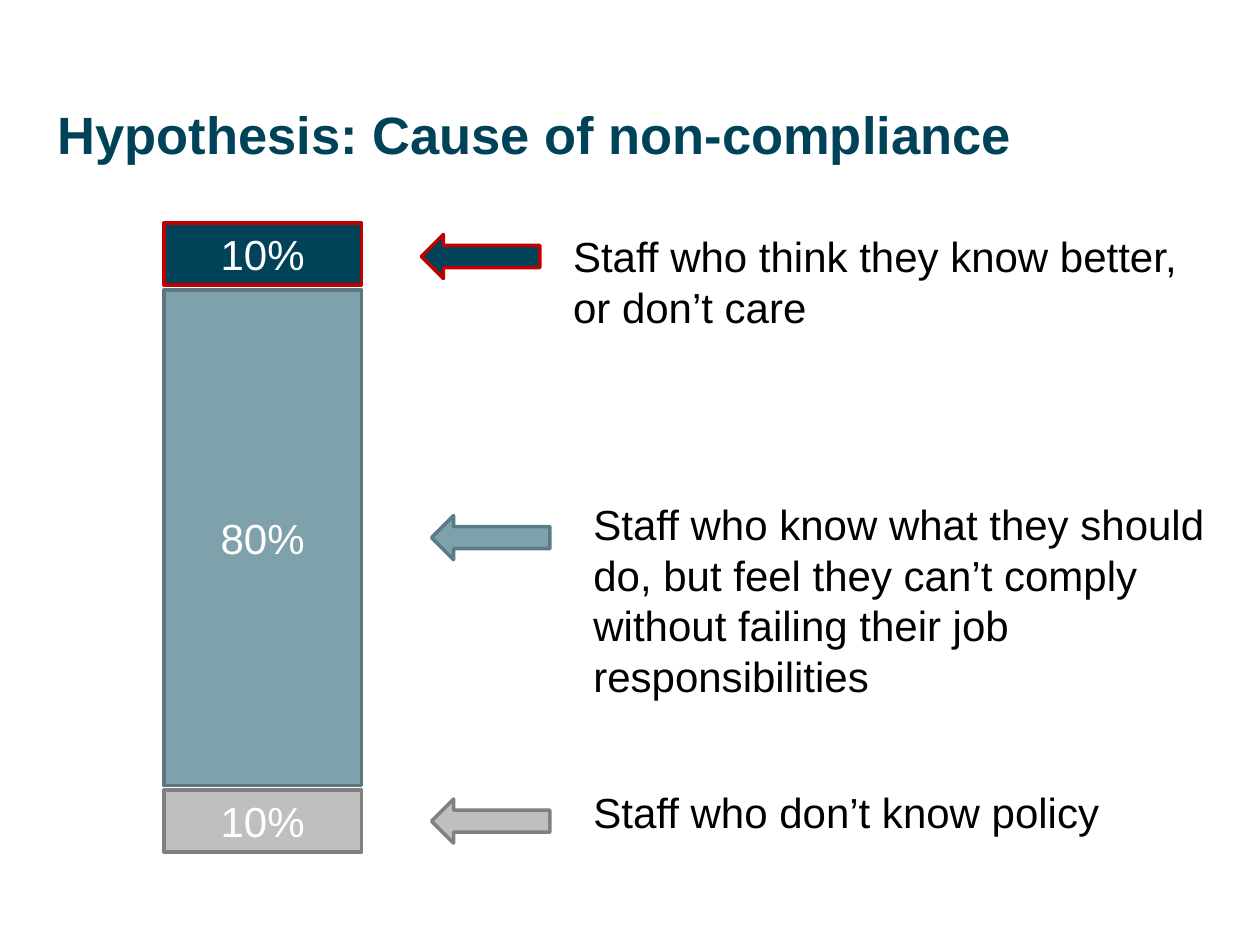
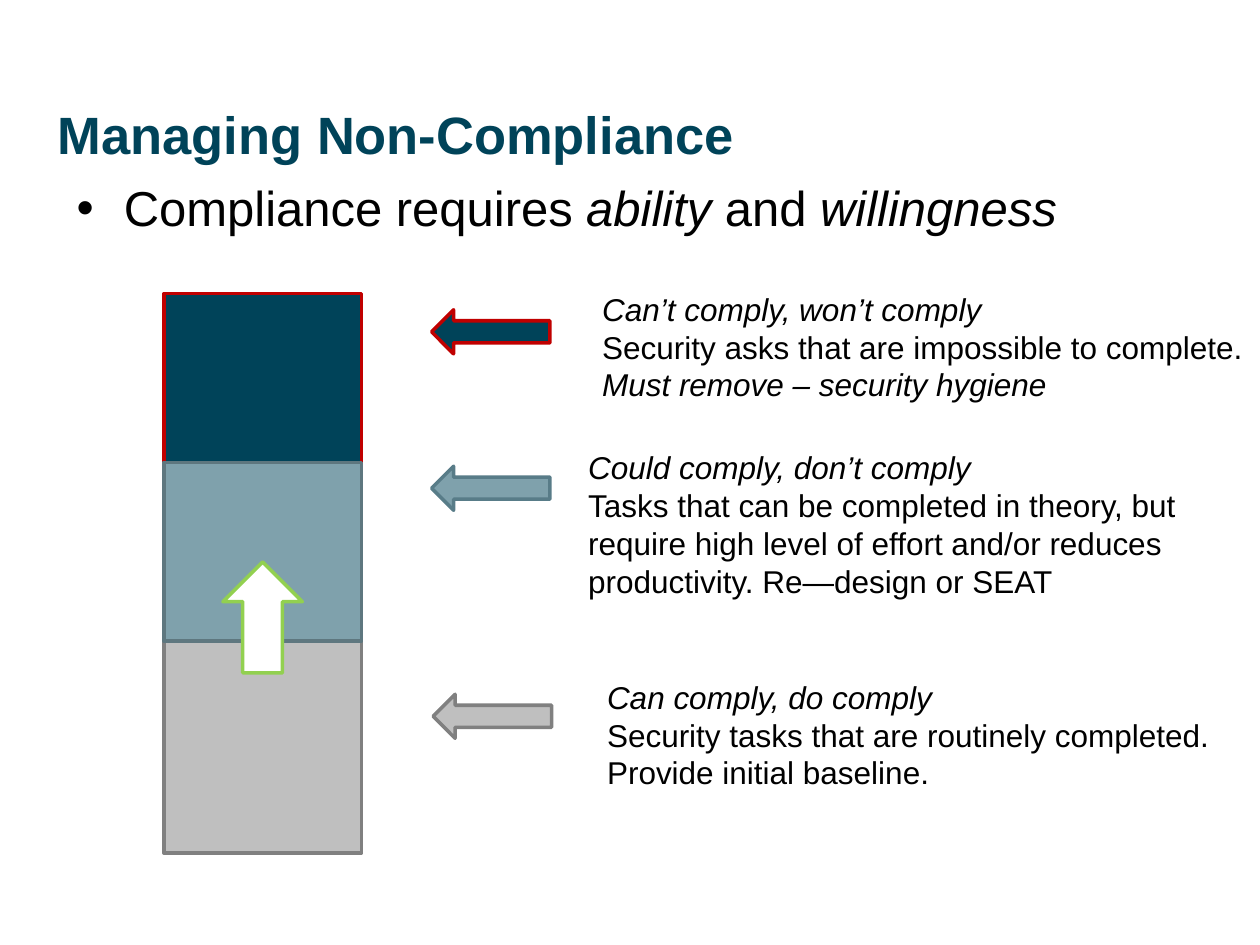
from dataclasses import dataclass

from lxml import etree
from pptx import Presentation
from pptx.dml.color import RGBColor
from pptx.enum.shapes import MSO_SHAPE
from pptx.enum.text import MSO_ANCHOR, PP_ALIGN
from pptx.oxml.ns import qn
from pptx.util import Pt

RECT = MSO_SHAPE.RECTANGLE
LEFT = MSO_SHAPE.LEFT_ARROW
UP = MSO_SHAPE.UP_ARROW
MIDDLE = MSO_ANCHOR.MIDDLE
CENTER = PP_ALIGN.CENTER


@dataclass(frozen=True)
class Theme:
    font: str = "Arial"
    navy: str = "004359"
    red: str = "C00000"
    teal: str = "7FA1AC"
    slate: str = "5E777F"
    steel: str = "587C88"
    silver: str = "BFBFBF"
    gray: str = "808080"
    green: str = "92D050"
    white: str = "FFFFFF"
    black: str = "000000"
    title: int = 30
    lead: int = 28
    body: int = 24
    note: int = 18
    edge: int = 2


T = Theme()
TOP = (T.navy, T.red)
MID = (T.teal, T.slate)
LOW = (T.silver, T.gray)
BAR_X, BAR_W = 93.6, 113
ARROW_W, ARROW_H = 67.7, 25.2


def write(para, text, size, color, bold=False):
    """Text between asterisks is italic."""
    font = para.font
    font.name, font.size, font.bold = T.font, Pt(size), bold
    font.color.rgb = RGBColor.from_string(color)
    parts = [(part, i % 2 == 1) for i, part in enumerate(text.split("*")) if part]
    for part, slant in parts:
        run = para.add_run()
        run.text = part
        if len(parts) > 1:
            run.font.italic = slant
        else:
            font.italic = slant


def add_text(slide, box, lines, size, color=T.black, bold=False, bullet=False):
    frame = slide.shapes.add_textbox(*map(Pt, box)).text_frame
    frame.word_wrap = True
    for i, line in enumerate(lines):
        para = frame.add_paragraph() if i else frame.paragraphs[0]
        if bullet:
            add_bullet(para)
        write(para, line, size, color, bold)


def add_bullet(para):
    props = para._p.get_or_add_pPr()
    props.set("marL", str(Pt(27)))
    props.set("indent", str(-Pt(27)))
    etree.SubElement(props, qn("a:buFont")).set("typeface", T.font)
    etree.SubElement(props, qn("a:buChar")).set("char", "•")


def add_form(slide, kind, box, fill, line):
    form = slide.shapes.add_shape(kind, *map(Pt, box))
    form.shadow.inherit = False
    form.fill.solid()
    form.fill.fore_color.rgb = RGBColor.from_string(fill)
    form.line.color.rgb = RGBColor.from_string(line)
    form.line.width = Pt(T.edge)
    return form


def add_band(slide, top, height, tone, label=""):
    form = add_form(slide, RECT, (BAR_X, top, BAR_W, height), *tone)
    if label:
        frame = form.text_frame
        frame.vertical_anchor = MIDDLE
        para = frame.paragraphs[0]
        para.alignment = CENTER
        write(para, label, T.body, T.white)


def add_arrow(slide, left, top, tone):
    fill, line = tone
    line = T.steel if tone == MID else line
    add_form(slide, LEFT, (left, top, ARROW_W, ARROW_H), fill, line)


def add_page(deck, title):
    slide = deck.slides.add_slide(deck.slide_layouts[6])
    add_text(slide, (26, 54.7, 668, 79.2), [title], T.title, T.navy, bold=True)
    return slide


def add_cause(deck):
    slide = add_page(deck, "Hypothesis: Cause of non-compliance")
    add_band(slide, 127.4, 35.6, TOP, "10%")
    add_band(slide, 451.4, 35.6, LOW, "10%")
    add_band(slide, 165.6, 283.4, MID, "80%")
    for left, top, tone in ((240.8, 134, TOP), (246.6, 294.6, MID), (246.6, 456.6, LOW)):
        add_arrow(slide, left, top, tone)
    notes = (
        ((320.4, 128.4, 381.6, 65.5), "Staff who think they know better, or don’t care"),
        ((332, 281.5, 373.7, 123.8), "Staff who know what they should do, but feel they "
         "can’t comply without failing their job responsibilities"),
        ((332, 445.7, 373.7, 36), "Staff who don’t know policy"),
    )
    for box, text in notes:
        add_text(slide, box, [text], T.body)


def add_manage(deck):
    slide = add_page(deck, "Managing Non-Compliance")
    add_text(slide, (36.7, 98, 648, 356.4),
             ["Compliance requires *ability* and *willingness*"], T.lead, bullet=True)
    for top, height, tone in ((167.8, 96.5, TOP), (331.9, 155.5, LOW), (264.2, 102.2, MID)):
        add_band(slide, top, height, tone)
    for left, top, tone in ((246.6, 177, TOP), (246.6, 266.4, MID), (247.5, 396.7, LOW)):
        add_arrow(slide, left, top, tone)
    notes = (
        ((337, 162, 381.6, 72.7),
         ["*Can’t comply, won’t comply*",
          "Security asks that are impossible to complete. *Must remove – security hygiene*"]),
        ((329, 252.7, 381.6, 94.3),
         ["*Could comply, don’t comply*",
          "Tasks that can be completed in theory, but require high level of effort "
          "and/or reduces productivity. Re—design or SEAT"]),
        ((339.8, 383.8, 373.7, 72.7),
         ["*Can comply, do comply*",
          "Security tasks that are routinely completed.",
          "Provide initial baseline."]),
    )
    for box, lines in notes:
        add_text(slide, box, lines, T.note)
    add_form(slide, UP, (127.4, 321.1, 45.4, 63.4), T.white, T.green)


def main():
    deck = Presentation()
    deck.slide_width, deck.slide_height = Pt(720), Pt(540)
    add_cause(deck)
    add_manage(deck)
    deck.save("out.pptx")


if __name__ == "__main__":
    main()
